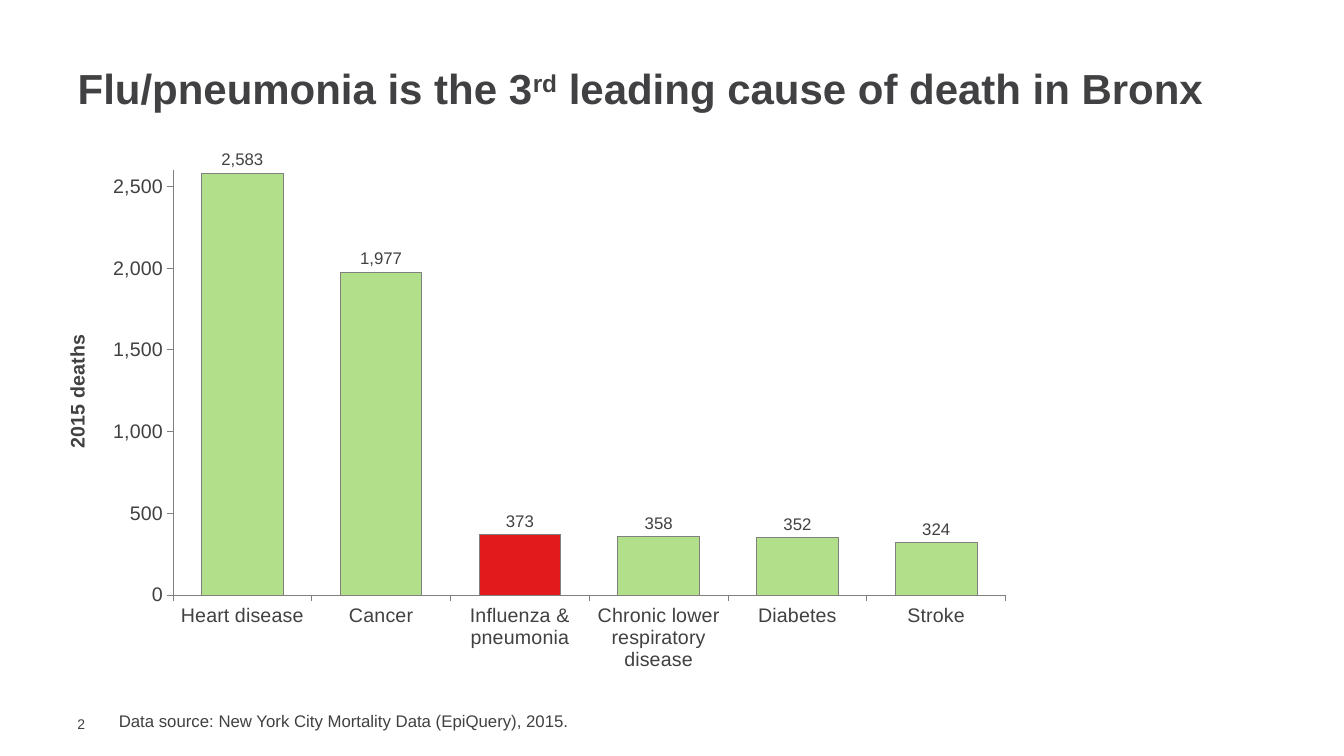
import pptx
import pptx.chart.data
import pptx.dml.color
import pptx.enum.chart
import pptx.enum.text
import pptx.oxml
import pptx.oxml.ns
import pptx.util

Inches = pptx.util.Inches
Pt = pptx.util.Pt
RGBColor = pptx.dml.color.RGBColor

TEXT_GRAY = RGBColor(0x41, 0x40, 0x42)
LINE_GRAY = RGBColor(0x80, 0x80, 0x80)
BAR_GREEN = RGBColor(0xB2, 0xDF, 0x8A)
FLU_RED = RGBColor(0xE3, 0x1A, 0x1C)

DEATHS = {
    "Heart disease": 2583,
    "Cancer": 1977,
    "Influenza & pneumonia": 373,
    "Chronic lower respiratory disease": 358,
    "Diabetes": 352,
    "Stroke": 324,
}


class DeathsSlide:
    """Holds the style and the current slide, and adds each kind of element."""

    font_name = "Arial"

    def __init__(self, presentation):
        self.slide = presentation.slides.add_slide(presentation.slide_layouts[5])

    def style(self, font, size, bold=False):
        font.name = self.font_name
        font.size = Pt(size)
        font.bold = bold
        font.color.rgb = TEXT_GRAY

    def place(self, element, index, target=None, **fractions):
        for old_layout in element.findall(pptx.oxml.ns.qn("c:layout")):
            element.remove(old_layout)
        inner = f'<c:layoutTarget val="{target}"/>' if target else ""
        modes = "".join(f'<c:{edge}Mode val="edge"/>' for edge in ("x", "y"))
        values = "".join(f'<c:{key} val="{value}"/>' for key, value in fractions.items())
        layout = pptx.oxml.parse_xml(
            f'<c:layout {pptx.oxml.ns.nsdecls("c")}><c:manualLayout>'
            f"{inner}{modes}{values}</c:manualLayout></c:layout>"
        )
        element.insert(index, layout)

    def add_title(self, parts):
        title = self.slide.shapes.title
        title.left, title.top = Inches(0.67), Inches(0.67)
        title.width, title.height = Inches(12), Inches(0.5)
        frame = title.text_frame
        frame.word_wrap = True
        frame.auto_size = pptx.enum.text.MSO_AUTO_SIZE.SHAPE_TO_FIT_TEXT
        frame.vertical_anchor = pptx.enum.text.MSO_ANCHOR.MIDDLE
        paragraph = frame.paragraphs[0]
        paragraph.alignment = pptx.enum.text.PP_ALIGN.LEFT
        paragraph.line_spacing = 0.8
        self.style(paragraph.font, 30, bold=True)
        for text, baseline in parts:
            run = paragraph.add_run()
            run.text = text
            if baseline:
                run.font._element.set("baseline", str(baseline * 1000))

    def add_text(self, text, left, top, width, height, size, inset=0.05):
        shape = self.slide.shapes.add_textbox(
            Inches(left), Inches(top), Inches(width), Inches(height)
        )
        frame = shape.text_frame
        frame.word_wrap = True
        frame.auto_size = pptx.enum.text.MSO_AUTO_SIZE.SHAPE_TO_FIT_TEXT
        frame.margin_top = frame.margin_bottom = Inches(inset)
        if not inset:
            frame.margin_right = 0
            frame.vertical_anchor = pptx.enum.text.MSO_ANCHOR.MIDDLE
        paragraph = frame.paragraphs[0]
        paragraph.text = text
        self.style(paragraph.font, size)

    def add_column_chart(self, values, highlighted, axis_title):
        chart_data = pptx.chart.data.CategoryChartData(number_format="#,##0")
        chart_data.categories = list(values)
        chart_data.add_series("Series 1", list(values.values()))
        chart = self.slide.shapes.add_chart(
            pptx.enum.chart.XL_CHART_TYPE.COLUMN_CLUSTERED,
            Inches(0.41), Inches(1.5), Inches(9.75), Inches(5.25), chart_data,
        ).chart
        chart.has_legend = False
        chart.has_title = False
        self.style(chart.font, 14)

        for axis in (chart.category_axis, chart.value_axis):
            axis.has_major_gridlines = False
            axis.major_tick_mark = pptx.enum.chart.XL_TICK_MARK.OUTSIDE
            axis.format.line.color.rgb = LINE_GRAY
            axis.format.line.width = Pt(0.75)
        value_axis = chart.value_axis
        value_axis.minimum_scale = 0
        value_axis.maximum_scale = 2600
        value_axis.major_unit = 500
        value_axis.tick_labels.number_format = "#,##0"
        value_axis.tick_labels.number_format_is_linked = False
        title_paragraph = value_axis.axis_title.text_frame.paragraphs[0]
        title_paragraph.text = axis_title
        self.style(title_paragraph.font, 14, bold=True)
        self.place(value_axis.axis_title._element, 1, x=0.02, y=0.34)

        plot = chart.plots[0]
        plot.gap_width = 70
        plot.vary_by_categories = False
        series = plot.series[0]
        flu_point = series.points[list(values).index(highlighted)]
        for bar, color in ((series, BAR_GREEN), (flu_point, FLU_RED)):
            bar.format.fill.solid()
            bar.format.fill.fore_color.rgb = color
            bar.format.line.color.rgb = LINE_GRAY
            bar.format.line.width = Pt(0.75)
        labels = series.data_labels
        labels.show_value = True
        labels.number_format = "#,##0"
        labels.number_format_is_linked = False
        labels.position = pptx.enum.chart.XL_LABEL_POSITION.OUTSIDE_END
        self.style(labels.font, 12)
        plot_area = chart._chartSpace.chart.plotArea
        self.place(plot_area, 0, "inner", x=0.134, y=0.036, w=0.847, h=0.803)


def main():
    presentation = pptx.Presentation()
    presentation.slide_width = Inches(13.33)
    presentation.slide_height = Inches(7.5)
    page = DeathsSlide(presentation)
    page.add_text("2", 0.67, 7.1, 0.43, 0.17, size=10, inset=0)
    page.add_title([
        ("Flu/pneumonia is the 3", 0),
        ("rd", 30),
        (" leading cause of death in Bronx", 0),
    ])
    page.add_text(
        "Data source: New York City Mortality Data (EpiQuery), 2015.",
        1.08, 7, 9.92, 0.3, size=12,
    )
    page.add_column_chart(DEATHS, "Influenza & pneumonia", "2015 deaths")
    presentation.save("out.pptx")


if __name__ == "__main__":
    main()
